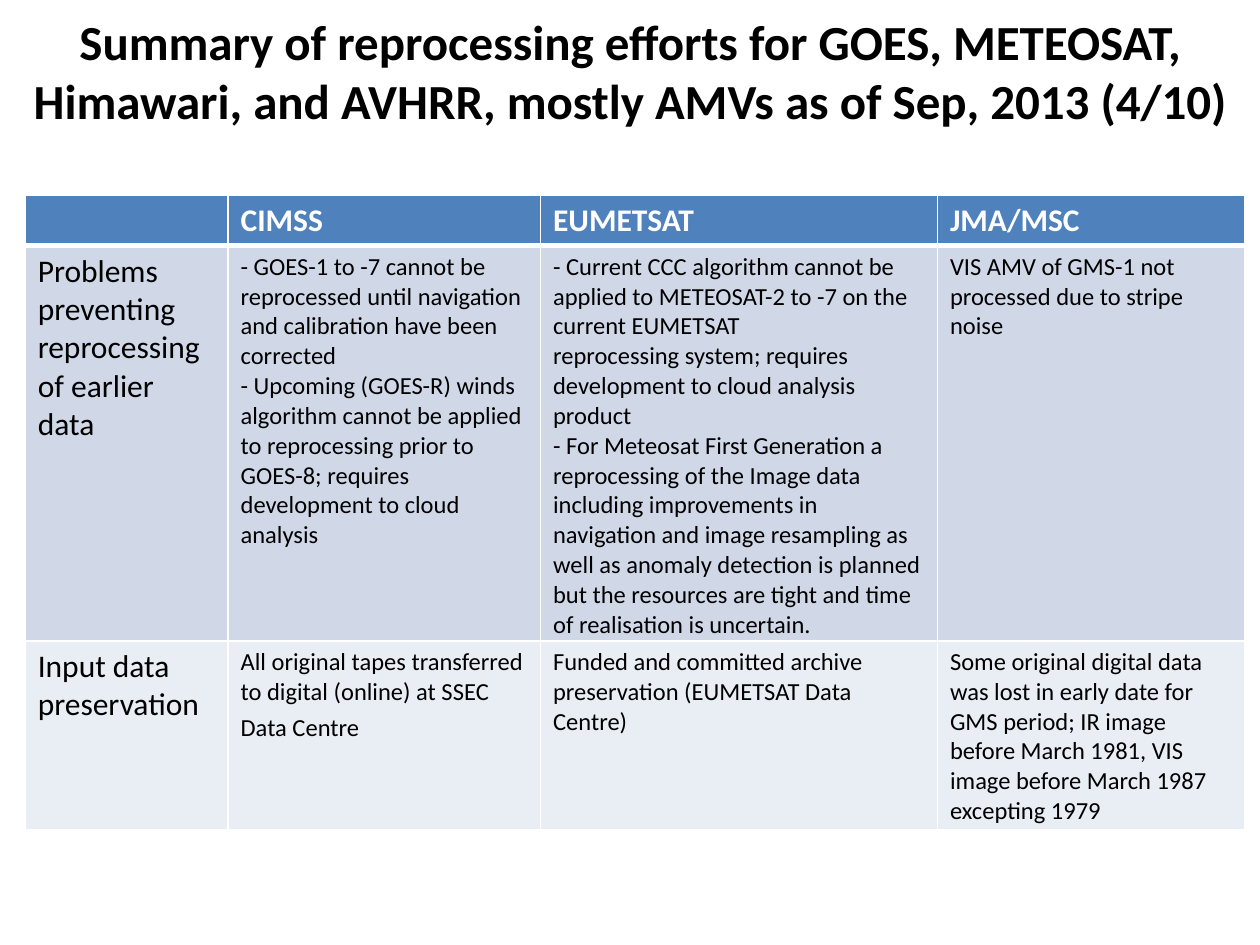
from pptx import Presentation
from pptx.dml.color import RGBColor
from pptx.enum import text
from pptx.oxml import parse_xml
from pptx.oxml.ns import nsdecls
from pptx.util import Inches, Pt


def write(frame, lines, size=14, color="000000", bold=False, align=text.PP_ALIGN.LEFT):
    """Fill a text frame, one paragraph per line, and return the last paragraph."""
    frame.word_wrap = True
    for index, line in enumerate(lines):
        paragraph = frame.paragraphs[0] if index == 0 else frame.add_paragraph()
        paragraph.alignment = align
        run = paragraph.add_run()
        run.text = line
        run.font.name = "Calibri"
        run.font.size = Pt(size)
        run.font.bold = bold
        run.font.color.rgb = RGBColor.from_string(color)
    return paragraph


def style_cell(cell, fill, bottom_width):
    """Set the cell's white borders and its fill."""
    properties = cell._tc.get_or_add_tcPr()
    for side, width in (("L", 1), ("R", 1), ("T", 1), ("B", bottom_width)):
        properties.append(parse_xml(
            f'<a:ln{side} {nsdecls("a")} w="{Pt(width)}"><a:solidFill>'
            f'<a:srgbClr val="FFFFFF"/></a:solidFill></a:ln{side}>'))
    cell.fill.solid()
    cell.fill.fore_color.rgb = RGBColor.from_string(fill)


presentation = Presentation()
presentation.slide_width = Inches(10)
presentation.slide_height = Inches(7.5)
slide = presentation.slides.add_slide(presentation.slide_layouts[6])

title = slide.shapes.add_textbox(Inches(0), Inches(0.05), Inches(10), Inches(1.02))
title.text_frame.vertical_anchor = text.MSO_ANCHOR.MIDDLE
write(title.text_frame,
      ["Summary of reprocessing efforts for GOES, METEOSAT, Himawari, and AVHRR, "
       "mostly AMVs as of Sep, 2013 (4/10)"],
      size=28, bold=True, align=text.PP_ALIGN.CENTER)

rows = [
    [[], ["CIMSS"], ["EUMETSAT"], ["JMA/MSC"]],
    [
        ["Problems preventing reprocessing of earlier data"],
        ["- GOES-1 to -7 cannot be reprocessed until navigation and calibration "
         "have been corrected",
         "- Upcoming (GOES-R) winds algorithm cannot be applied to reprocessing "
         "prior to GOES-8; requires development to cloud analysis"],
        ["- Current CCC algorithm cannot be applied to METEOSAT-2 to -7 on the "
         "current EUMETSAT",
         "reprocessing system; requires development to cloud analysis product",
         "- For Meteosat First Generation a reprocessing of the Image data including "
         "improvements in navigation and image resampling as well as anomaly "
         "detection is planned but the resources are tight and time of realisation "
         "is uncertain."],
        ["VIS AMV of GMS-1 not processed due to stripe noise"],
    ],
    [
        ["Input data preservation"],
        ["All original tapes transferred to digital (online) at SSEC Data Centre"],
        ["Funded and committed archive preservation (EUMETSAT Data Centre)"],
        ["Some original digital data was lost in early date for GMS period; IR image "
         "before March 1981, VIS image before March 1987 excepting 1979"],
    ],
]
column_widths = [1.61, 2.48, 3.15, 2.44]
row_heights = [0.38, 2.99, 1.43]
row_fills = ["4F81BD", "D0D8E8", "E9EDF4"]

table = slide.shapes.add_table(
    len(rows), len(column_widths), Inches(0.2), Inches(1.55),
    Inches(sum(column_widths)), Inches(sum(row_heights))).table
for column, width in zip(table.columns, column_widths):
    column.width = Inches(width)

for row_index, row in enumerate(rows):
    table.rows[row_index].height = Inches(row_heights[row_index])
    header = row_index == 0
    for column_index, lines in enumerate(row):
        cell = table.cell(row_index, column_index)
        style_cell(cell, row_fills[row_index], bottom_width=3 if header else 1)
        if lines:
            write(cell.text_frame, lines,
                  size=18 if header or column_index == 0 else 14,
                  color="FFFFFF" if header else "000000", bold=header)

# A larger closing tab opens up the last line of the tape archive cell.
closing_tab = table.cell(2, 1).text_frame.paragraphs[0].add_run()
closing_tab.text = "\t"
closing_tab.font.name = "Calibri"
closing_tab.font.size = Pt(18)

presentation.save("out.pptx")
